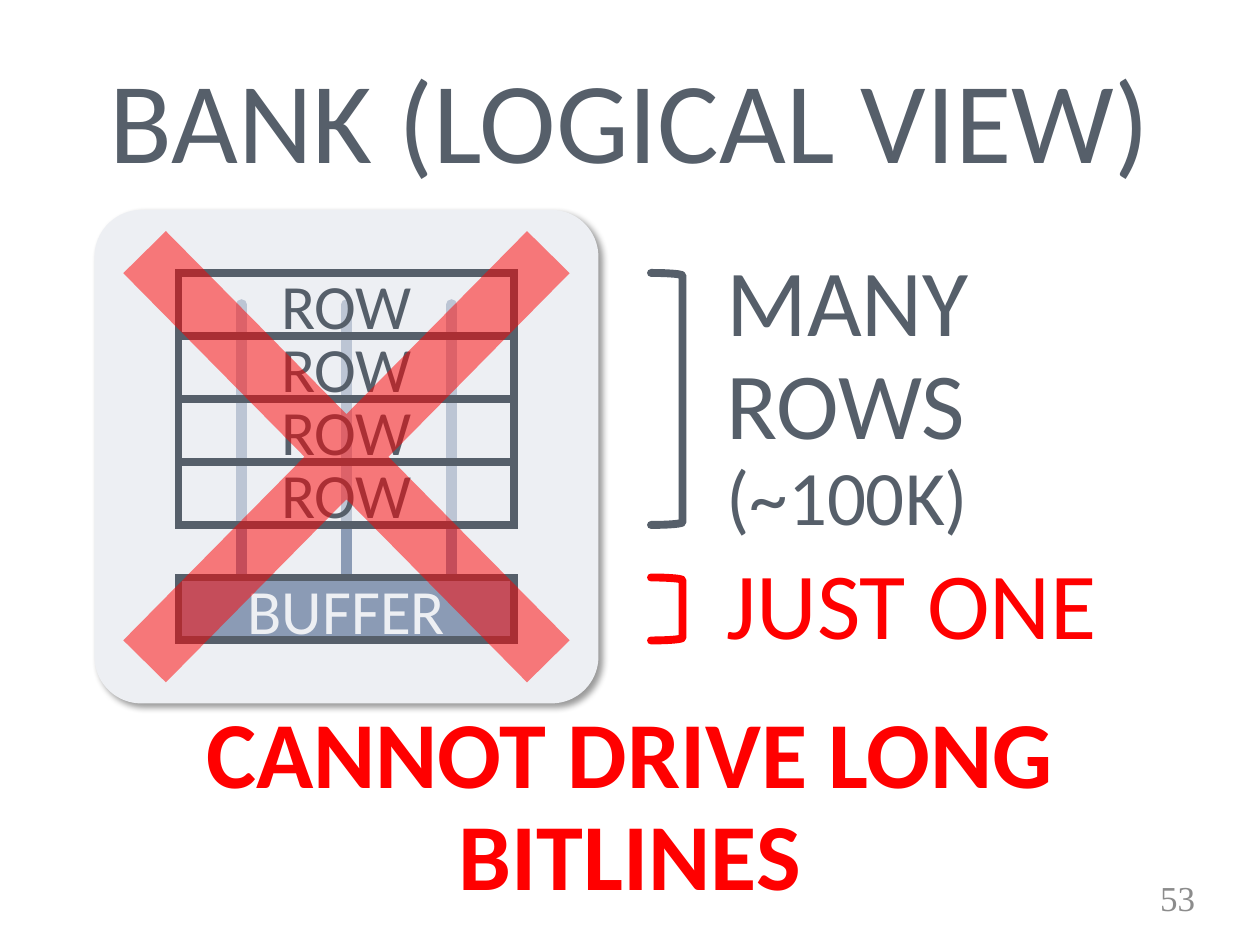
from dataclasses import dataclass

from lxml.etree import SubElement
from pptx import Presentation
from pptx.dml.color import RGBColor
from pptx.enum.shapes import MSO_CONNECTOR, MSO_SHAPE as Preset
from pptx.enum.text import MSO_ANCHOR as Anchor, MSO_AUTO_SIZE as AutoSize, PP_ALIGN as Align
from pptx.oxml.ns import qn
from pptx.util import Emu, Pt

PX = 9525


@dataclass(frozen=True)
class Theme:
    ink: str = "565F6A"
    steel: str = "8B9BB5"
    mist: str = "EDEFF3"
    alert: str = "FF0000"
    muted: str = "8C8C8C"
    font: str = "Calibri"
    number_font: str = "Times New Roman"
    title: int = 66
    label: int = 54
    detail: int = 44
    cell: int = 36
    number: int = 20
    outline: float = 4.5
    bitline: float = 6


THEME = Theme()


def px(*values):
    return [Emu(value * PX) for value in values]


def apply(target, values):
    for name, value in values.items():
        setattr(target, name, value)


def write(shape, segments, color, align=Align.LEFT, spacing=0.9, font=THEME.font, bold=False, inset=None):
    frame = shape.text_frame
    apply(frame, {"word_wrap": True, "auto_size": AutoSize.NONE, "vertical_anchor": Anchor.MIDDLE})
    if inset is not None:
        sides = ("left", "top", "right", "bottom")
        apply(frame, {f"margin_{side}": Emu(inset) for side in sides})
    paragraph = frame.paragraphs[0]
    apply(paragraph, {"alignment": align, "line_spacing": spacing})
    for index, (text, size) in enumerate(segments):
        if index:
            paragraph.add_line_break()
        run = paragraph.add_run()
        run.text = text
        apply(run.font, {"name": font, "size": Pt(size), "bold": bold})
        run.font.color.rgb = RGBColor.from_string(color)


def add_text(slide, box, segments, color, **style):
    write(slide.shapes.add_textbox(*px(*box)), segments, color, **style)


def add_line_style(shape, color, width, cap="flat", join="miter"):
    shape.line.color.rgb = RGBColor.from_string(color)
    shape.line.width = Pt(width)
    line = shape.element.spPr.find(qn("a:ln"))
    line.set("cap", cap)
    SubElement(line, qn(f"a:{join}"))


def add_shape(slide, preset, box, fill=None, opacity=100, adjust=None):
    shape = slide.shapes.add_shape(preset, *px(*box))
    shape.shadow.inherit = False
    shape.line.fill.background()
    if adjust is not None:
        shape.adjustments[0] = adjust
    if fill is None:
        shape.fill.background()
        return shape
    shape.fill.solid()
    shape.fill.fore_color.rgb = RGBColor.from_string(fill)
    if opacity < 100:
        color = shape.element.spPr.find(qn("a:solidFill"))[0]
        SubElement(color, qn("a:alpha"), val=str(opacity * 1000))
    return shape


def add_panel(slide, box):
    panel = add_shape(slide, Preset.ROUNDED_RECTANGLE, box, THEME.mist, adjust=0.095)
    effects = panel.element.spPr.find(qn("a:effectLst"))
    shadow = SubElement(effects, qn("a:outerShdw"), blurRad=str(Pt(4)), dist=str(Pt(3)),
                        dir=str(45 * 60000), algn="tl", rotWithShape="0")
    color = SubElement(shadow, qn("a:srgbClr"), val="000000")
    SubElement(color, qn("a:alpha"), val="40000")


def add_bitline(slide, x, top, bottom):
    bitline = slide.shapes.add_connector(MSO_CONNECTOR.STRAIGHT, *px(x, top, x, bottom))
    add_line_style(bitline, THEME.steel, THEME.bitline, "rnd", "round")
    SubElement(bitline.element.spPr, qn("a:effectLst"))
    return bitline


def add_cell(slide, top, text, fill, color, opacity=100):
    cell = add_shape(slide, Preset.RECTANGLE, (136, top, 256, 48), fill, opacity)
    add_line_style(cell, THEME.ink, THEME.outline)
    write(cell, [(text, THEME.cell)], color, Align.CENTER, spacing=1.0)
    return cell


def add_bracket(slide, top, height, color):
    bracket = add_shape(slide, Preset.RIGHT_BRACKET, (496, top, 24, height))
    add_line_style(bracket, color, THEME.outline, "rnd", "round")


def add_title(slide, text):
    title = slide.shapes.title
    apply(title, dict(zip(("left", "top", "width", "height"), px(72, 48, 816, 96))))
    write(title, [(text, THEME.title)], THEME.ink, Align.CENTER)


def add_bank(slide):
    add_panel(slide, (72, 160, 384, 376))
    bitlines = [add_bitline(slide, x, 232, 440) for x in (184, 264, 344)]
    buffer = add_cell(slide, 440, "BUFFER", THEME.steel, THEME.mist)
    bitlines[1].end_connect(buffer, 0)
    for row in range(4):
        add_cell(slide, 208 + 48 * row, "ROW", THEME.mist, THEME.ink, 50)
    add_shape(slide, Preset.MATH_MULTIPLY, (-32, 48, 592, 600), THEME.alert, 50, 0.077)


def main():
    presentation = Presentation()
    apply(presentation, dict(zip(("slide_width", "slide_height"), px(960, 720))))
    slide = presentation.slides.add_slide(presentation.slide_layouts[5])
    add_title(slide, "BANK (LOGICAL VIEW)")
    add_bank(slide)
    add_bracket(slide, 208, 192, THEME.ink)
    add_text(slide, (544, 208, 384, 192),
             [("MANY ROWS", THEME.label), ("(~100K)", THEME.detail)], THEME.ink)
    add_bracket(slide, 440, 48, THEME.alert)
    add_text(slide, (544, 432, 360, 64), [("JUST ONE", THEME.label)], THEME.alert)
    add_text(slide, (40, 568, 880, 96), [("CANNOT DRIVE LONG BITLINES", THEME.label)],
             THEME.alert, align=Align.CENTER, bold=True, inset=0)
    add_text(slide, (848, 665, 72, 38), [("53", THEME.number)], THEME.muted,
             align=Align.RIGHT, spacing=1.0, font=THEME.number_font)
    presentation.save("out.pptx")


if __name__ == "__main__":
    main()
